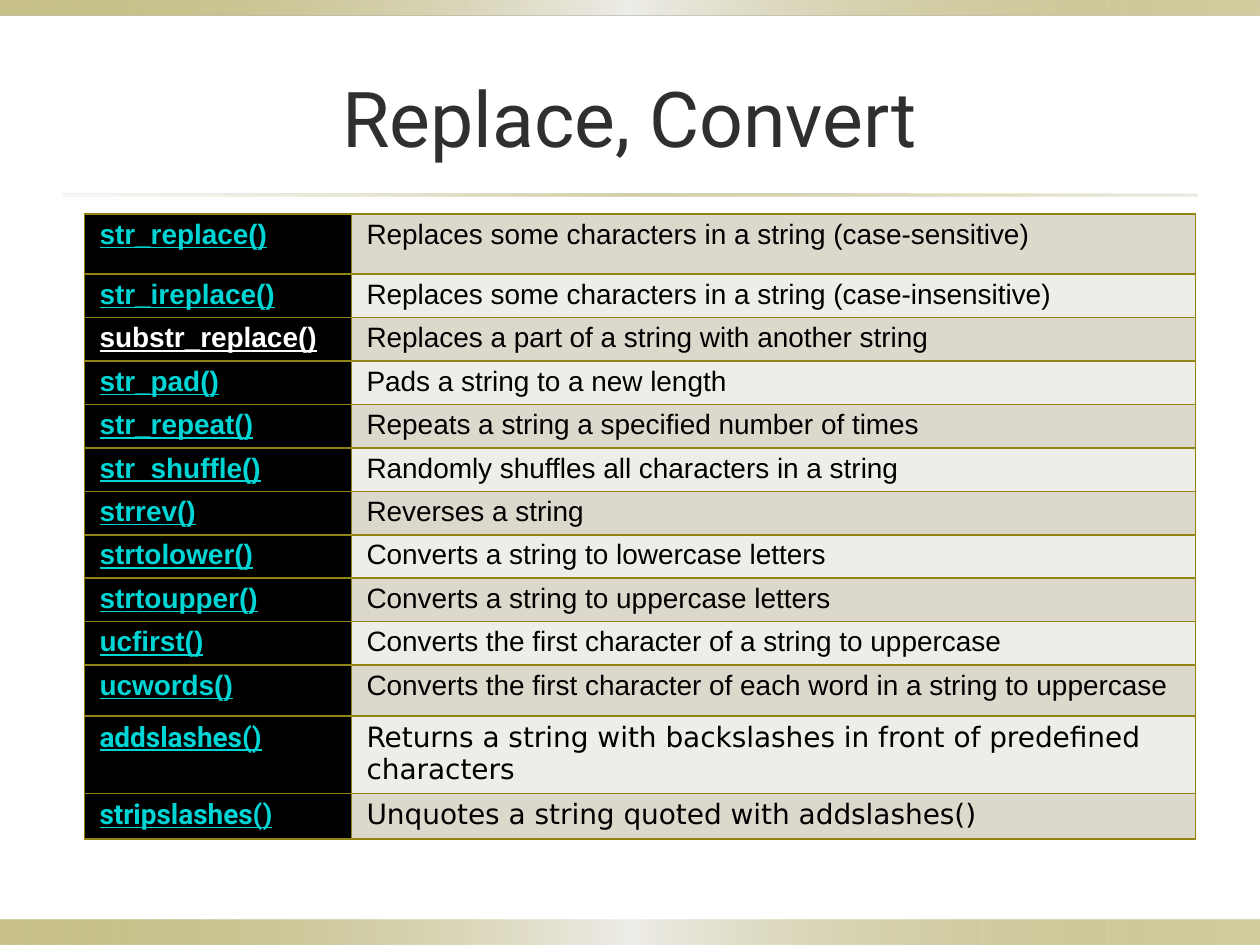
import pptx
import pptx.util
import pptx.dml.color
import pptx.enum.shapes
import pptx.enum.text
import pptx.oxml.ns
import lxml.etree as etree

Pt = pptx.util.Pt
qn = pptx.oxml.ns.qn

COLORS = {
    "olive": "918415", "sand": "DCD9CC", "pale": "EEEDE8", "title": "2F2F2F",
    "link": "00D5D5", "visited": "FFFFFF", "black": "000000",
}
TITLE = "Replace, Convert"
FUNCTIONS = [
    ("str_replace()", "Replaces some characters in a string (case-sensitive)"),
    ("str_ireplace()", "Replaces some characters in a string (case-insensitive)"),
    ("substr_replace()", "Replaces a part of a string with another string"),
    ("str_pad()", "Pads a string to a new length"),
    ("str_repeat()", "Repeats a string a specified number of times"),
    ("str_shuffle()", "Randomly shuffles all characters in a string"),
    ("strrev()", "Reverses a string"),
    ("strtolower()", "Converts a string to lowercase letters"),
    ("strtoupper()", "Converts a string to uppercase letters"),
    ("ucfirst()", "Converts the first character of a string to uppercase"),
    ("ucwords()", "Converts the first character of each word in a string to uppercase"),
    ("addslashes()", "Returns a string with backslashes in front of predefined characters"),
    ("stripslashes()", "Unquotes a string quoted with addslashes()"),
]
VISITED = "substr_replace()"
SLASH_FUNCTIONS = ("addslashes()", "stripslashes()")
ROW_HEIGHT = 24.85
SPECIAL_HEIGHTS = {
    "str_replace()": 34.2, "ucwords()": 29.2, "addslashes()": 44.3, "stripslashes()": 25.9,
}
COLUMN_WIDTHS = (152.6, 482.4)
TABLE_LEFT, TABLE_TOP = 48.24, 122.4
BAND_STOPS = [("olive", 50), ("pale", 100), ("olive", 40)]
RULE_STOPS = [("sand", 20), ("olive", 40), ("sand", 50)]
BARS = [
    ((0, 525.6, 720, 14.4), BAND_STOPS),
    ((0, 0, 720, 8.64), BAND_STOPS),
    ((36, 110.88, 648, 1.44), RULE_STOPS),
]
CELL_FORMAT = {
    "margin_left": Pt(8.64), "margin_right": Pt(2.88),
    "margin_top": Pt(2.88), "margin_bottom": Pt(2.88),
}


def apply_format(target, values):
    for name, value in values.items():
        setattr(target, name, value)


def set_font(font, color, **values):
    apply_format(font, values)
    font.color.rgb = pptx.dml.color.RGBColor.from_string(COLORS[color])


def add_color(parent, color, opacity=100):
    element = etree.SubElement(parent, qn("a:srgbClr"), val=COLORS[color])
    if opacity < 100:
        etree.SubElement(element, qn("a:alpha"), val=str(opacity * 1000))


def add_bar(slide, box, stops):
    shape = slide.shapes.add_shape(
        pptx.enum.shapes.MSO_SHAPE.RECTANGLE, *(Pt(length) for length in box))
    shape.shadow.inherit = False
    shape.line.fill.background()
    shape.fill.gradient()
    shape.fill.gradient_angle = 0
    stop_list = shape._element.spPr.find(".//" + qn("a:gsLst"))
    for stop in list(stop_list):
        stop_list.remove(stop)
    for index, (color, opacity) in enumerate(stops):
        stop = etree.SubElement(stop_list, qn("a:gs"), pos=str(index * 50000))
        add_color(stop, color, opacity)


def add_borders(cell):
    properties = cell._tc.get_or_add_tcPr()
    for side in ("a:lnL", "a:lnR", "a:lnT", "a:lnB"):
        line = etree.SubElement(properties, qn(side), w=str(Pt(1)))
        add_color(etree.SubElement(line, qn("a:solidFill")), "olive")


def fill_cell(cell, text, background, color, **font_values):
    apply_format(cell, CELL_FORMAT)
    add_borders(cell)
    cell.fill.solid()
    cell.fill.fore_color.rgb = pptx.dml.color.RGBColor.from_string(COLORS[background])
    cell.text = text
    run = cell.text_frame.paragraphs[0].runs[0]
    set_font(run.font, color, size=Pt(16), **font_values)


def add_title(slide):
    title = slide.shapes.title
    apply_format(title, {"left": Pt(36), "top": Pt(21.6), "width": Pt(648), "height": Pt(90)})
    title.text = TITLE
    title.text_frame.vertical_anchor = pptx.enum.text.MSO_ANCHOR.MIDDLE
    paragraph = title.text_frame.paragraphs[0]
    paragraph.alignment = pptx.enum.text.PP_ALIGN.CENTER
    set_font(paragraph.runs[0].font, "title", size=Pt(44), name="Roboto")


def add_function_table(slide):
    heights = [SPECIAL_HEIGHTS.get(name, ROW_HEIGHT) for name, _ in FUNCTIONS]
    table = slide.shapes.add_table(
        len(FUNCTIONS), len(COLUMN_WIDTHS), Pt(TABLE_LEFT), Pt(TABLE_TOP),
        Pt(sum(COLUMN_WIDTHS)), Pt(sum(heights))).table
    for column, width in zip(table.columns, COLUMN_WIDTHS):
        column.width = Pt(width)
    for index, (name, description) in enumerate(FUNCTIONS):
        table.rows[index].height = Pt(heights[index])
        fonts = ("Roboto", "DejaVu Sans") if name in SLASH_FUNCTIONS else ("Arial", "Arial")
        fill_cell(table.cell(index, 0), name, "black",
                  "visited" if name == VISITED else "link",
                  name=fonts[0], bold=True, underline=True)
        fill_cell(table.cell(index, 1), description, ("sand", "pale")[index % 2],
                  "black", name=fonts[1], bold=False)


def main():
    presentation = pptx.Presentation()
    apply_format(presentation, {"slide_width": Pt(720), "slide_height": Pt(540)})
    slide = presentation.slides.add_slide(presentation.slide_layouts[5])
    for box, stops in BARS:
        add_bar(slide, box, stops)
    add_title(slide)
    add_function_table(slide)
    presentation.save("out.pptx")


if __name__ == "__main__":
    main()
